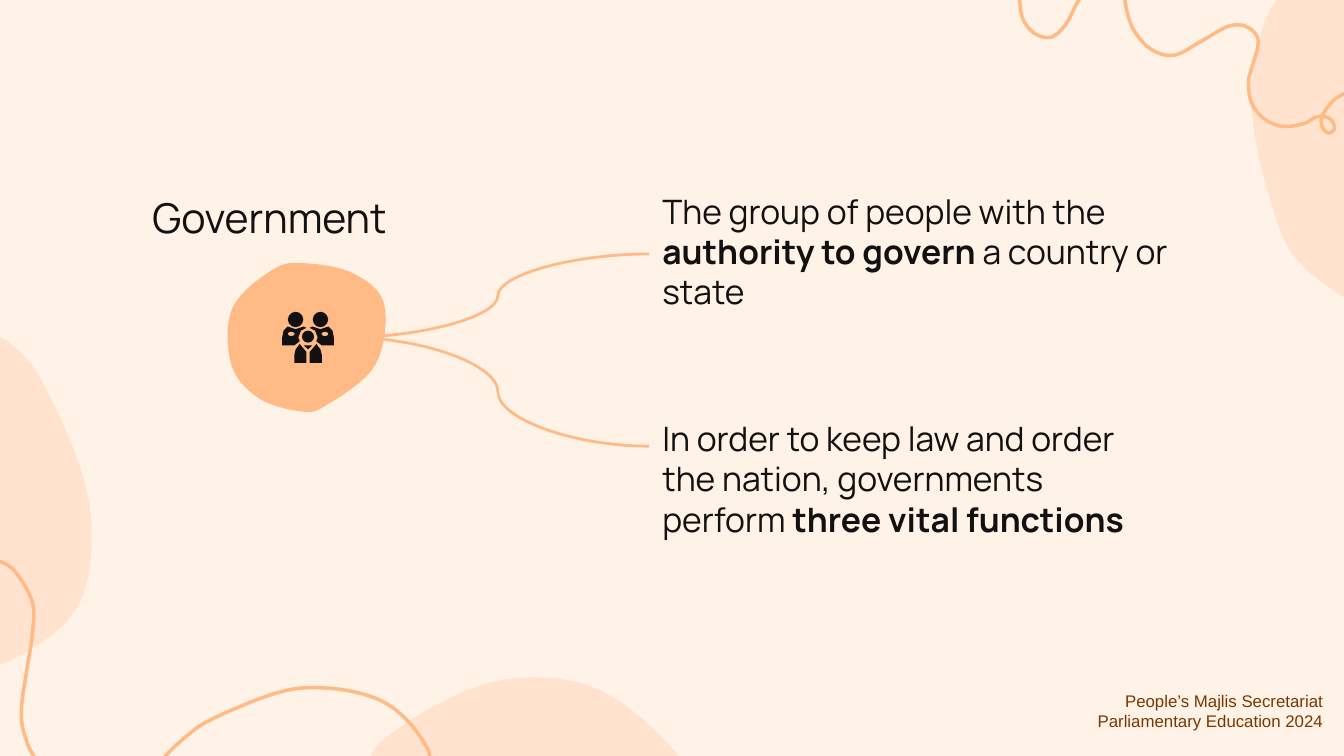
from dataclasses import dataclass
from math import cos, radians, sin

from lxml.etree import SubElement
from pptx import Presentation
from pptx.dml.color import RGBColor
from pptx.enum.shapes import MSO_CONNECTOR, MSO_SHAPE
from pptx.enum.text import MSO_ANCHOR, MSO_AUTO_SIZE, PP_ALIGN
from pptx.oxml.ns import qn
from pptx.util import Pt


@dataclass(frozen=True)
class Theme:
    paper: str = "FFF2E7"
    accent: str = "FFBA86"
    ink: str = "121010"
    credit: str = "793700"
    font: str = "Manrope"
    credit_font: str = "Arial"
    title_size: float = 22
    body_size: float = 18
    credit_size: float = 9
    branch_width: float = 1.5
    squiggle_width: float = 1.9
    blob_opacity: int = 25
    inset: float = 7.2


THEME = Theme()

# Text: boxes are left, top, width, height in points; spans are (wording, bold).
TITLE = ("Government", (62.64, 107.28, 163.44, 29.52))
STATEMENTS = [
    ([("The group of people with the ", False), ("authority to govern ", True),
      ("a country or state", False)],
     (347.76, 97.92, 294.48, 76.32), MSO_ANCHOR.BOTTOM),
    ([("In order to keep law and order the nation, governments perform ", False),
      ("three vital functions", True)],
     (347.76, 216.72, 270.72, 45.36), MSO_ANCHOR.TOP),
]
CREDIT = (["People’s Majlis Secretariat", "Parliamentary Education 2024"],
          (498.24, 366.48, 217.44, 28.8))
BRANCH_START = (185.76, 180.72)
BRANCH_ENDS = [(347.76, 136.08), (347.76, 239.04)]

# Outlines are on a 0.72 pt grid.
GRID = 0.72
CURVE_STEPS = 8
SQUIGGLES = [
    [(759, -9), (759, 4), (762, 16), (770, 25), (780, 28), (788, 24), (795, 15),
     (801, 3), (808, -8)],
    [(836, -12), (838, 6), (844, 23), (857, 37), (874, 41), (895, 30), (913, 20),
     (925, 19), (934, 25), (936, 34), (931, 52), (929, 61), (931, 76), (940, 88),
     (954, 94), (970, 92), (980, 87), (989, 88), (993, 95), (989, 99), (984, 95),
     (984, 86), (993, 74), (1004, 68)],
    [(-12, 417), (-2, 417), (11, 425), (24, 448), (24, 473), (16, 527), (20, 552),
     (28, 567)],
    [(115, 571), (135, 551), (158, 535), (208, 515), (243, 512), (278, 519),
     (301, 534), (318, 557), (320, 571)],
]
# One blob around its centre, placed as (centre x, centre y, scale, degrees).
BLOB = [(0, -55), (-25, -51), (-56, -22), (-57, 20), (-37, 45), (-6, 55), (13, 51),
        (50, 21), (57, -24), (35, -47)]
ICON_BLOB = (229, 251, 1, 0)
CORNER_BLOBS = [(-82.5, 372, 2.58, 59.1), (1077.5, 98, 2.58, 248.5),
                (382.5, 656, 2.58, 137.6)]

# The people icon: ovals are left, top, width, height; the left half is mirrored.
ICON_AXIS = 229.2
FRONT_HEAD = (224.7, 246, 9, 9)
BACK_HEAD = (214.2, 232, 11.5, 11.5)
BADGE = (214.2, 247, 5, 3)
COLLAR = [(226, 257), (229.2, 260), (232.4, 257)]
BODIES = [
    [(223, 256), (220, 260), (219, 264), (219, 270), (228, 270), (228, 262)],
    [(214, 243), (211, 246), (210, 251), (210, 257), (219, 257), (223, 254),
     (222, 251), (224, 246), (228, 244), (226, 243), (220, 245)],
]


def smooth(points, closed):
    """Return points along a Catmull-Rom curve through the given ones."""
    ends = (points[-1:], points[:2]) if closed else (points[:1], points[-1:])
    knots = ends[0] + points + ends[1]
    curve = [points[0]]
    for before, start, end, after in zip(knots, knots[1:], knots[2:], knots[3:]):
        for step in range(1, CURVE_STEPS + 1):
            t = step / CURVE_STEPS
            curve.append(tuple(
                b + t * (c - a + t * (2 * a - 5 * b + 4 * c - d
                                      + t * (3 * (b - c) + d - a))) / 2
                for a, b, c, d in zip(before, start, end, after)))
    return curve


def place_blob(center_x, center_y, scale, degrees):
    c, s = scale * cos(radians(degrees)), scale * sin(radians(degrees))
    return smooth([(center_x + x * c - y * s, center_y + x * s + y * c)
                   for x, y in BLOB], closed=True)


def draw(slide, points, closed=True):
    start, *rest = [(Pt(x * GRID), Pt(y * GRID)) for x, y in points]
    builder = slide.shapes.build_freeform(*start)
    builder.add_line_segments(rest, close=closed)
    return builder.convert_to_shape()


def fill_shape(shape, color, opacity=100):
    shape.shadow.inherit = False
    shape.line.fill.background()
    shape.fill.solid()
    shape.fill.fore_color.rgb = RGBColor.from_string(color)
    if opacity < 100:
        tone = shape.fill._xPr.find(qn("a:solidFill"))[0]
        SubElement(tone, qn("a:alpha"), val=str(opacity * 1000))


def add_oval(slide, place, color):
    place = [Pt(value * GRID) for value in place]
    fill_shape(slide.shapes.add_shape(MSO_SHAPE.OVAL, *place), color)


def stroke(line, width):
    line.color.rgb = RGBColor.from_string(THEME.accent)
    line.width = Pt(width)


def set_frame(box, anchor, inset_y=THEME.inset):
    frame = box.text_frame
    frame.word_wrap = True
    frame.auto_size = MSO_AUTO_SIZE.NONE
    frame.vertical_anchor = anchor
    frame.margin_left = frame.margin_right = Pt(THEME.inset)
    frame.margin_top = frame.margin_bottom = Pt(inset_y)
    return frame


def style(span, size, color=THEME.ink, font=THEME.font, bold=False):
    span.font.size = Pt(size)
    span.font.name = font
    span.font.bold = bold
    span.font.color.rgb = RGBColor.from_string(color)


def add_scenery(slide):
    for points in SQUIGGLES:
        squiggle = draw(slide, smooth(points, closed=False), closed=False)
        squiggle.shadow.inherit = False
        squiggle.fill.background()
        stroke(squiggle.line, THEME.squiggle_width)
    for placement in CORNER_BLOBS:
        fill_shape(draw(slide, place_blob(*placement)), THEME.accent, THEME.blob_opacity)


def add_texts(slide):
    wording, place = TITLE
    title = slide.shapes.title
    title.left, title.top, title.width, title.height = map(Pt, place)
    para = set_frame(title, MSO_ANCHOR.BOTTOM).paragraphs[0]
    para.text = wording
    para.alignment = PP_ALIGN.CENTER
    style(para.runs[0], THEME.title_size)

    for spans, place, anchor in STATEMENTS:
        box = slide.shapes.add_textbox(*map(Pt, place))
        para = set_frame(box, anchor).paragraphs[0]
        for wording, bold in spans:
            span = para.add_run()
            span.text = wording
            style(span, THEME.body_size, bold=bold)

    lines, place = CREDIT
    frame = set_frame(slide.shapes.add_textbox(*map(Pt, place)), MSO_ANCHOR.TOP, 3.6)
    frame.text = "\n".join(lines)
    for para in frame.paragraphs:
        para.alignment = PP_ALIGN.RIGHT
        style(para.runs[0], THEME.credit_size, THEME.credit, THEME.credit_font)


def add_branches(slide):
    for end in BRANCH_ENDS:
        branch = slide.shapes.add_connector(MSO_CONNECTOR.CURVE, *map(Pt, BRANCH_START + end))
        stroke(branch.line, THEME.branch_width)
        SubElement(branch._element.spPr, qn("a:effectLst"))


def add_icon(slide):
    fill_shape(draw(slide, place_blob(*ICON_BLOB)), THEME.accent)
    add_oval(slide, FRONT_HEAD, THEME.ink)
    fill_shape(draw(slide, COLLAR), THEME.ink)
    for body in BODIES:
        for half in (body, [(2 * ICON_AXIS - x, y) for x, y in body]):
            fill_shape(draw(slide, half), THEME.ink)
    for (left, *rest), color in ((BACK_HEAD, THEME.ink), (BADGE, THEME.accent)):
        for x in (left, 2 * ICON_AXIS - left - rest[1]):
            add_oval(slide, (x, *rest), color)


def main():
    deck = Presentation()
    deck.slide_width, deck.slide_height = Pt(720), Pt(405)
    slide = deck.slides.add_slide(deck.slide_layouts[5])
    slide.background.fill.solid()
    slide.background.fill.fore_color.rgb = RGBColor.from_string(THEME.paper)
    add_scenery(slide)
    add_texts(slide)
    add_branches(slide)
    add_icon(slide)
    deck.save("out.pptx")


if __name__ == "__main__":
    main()
